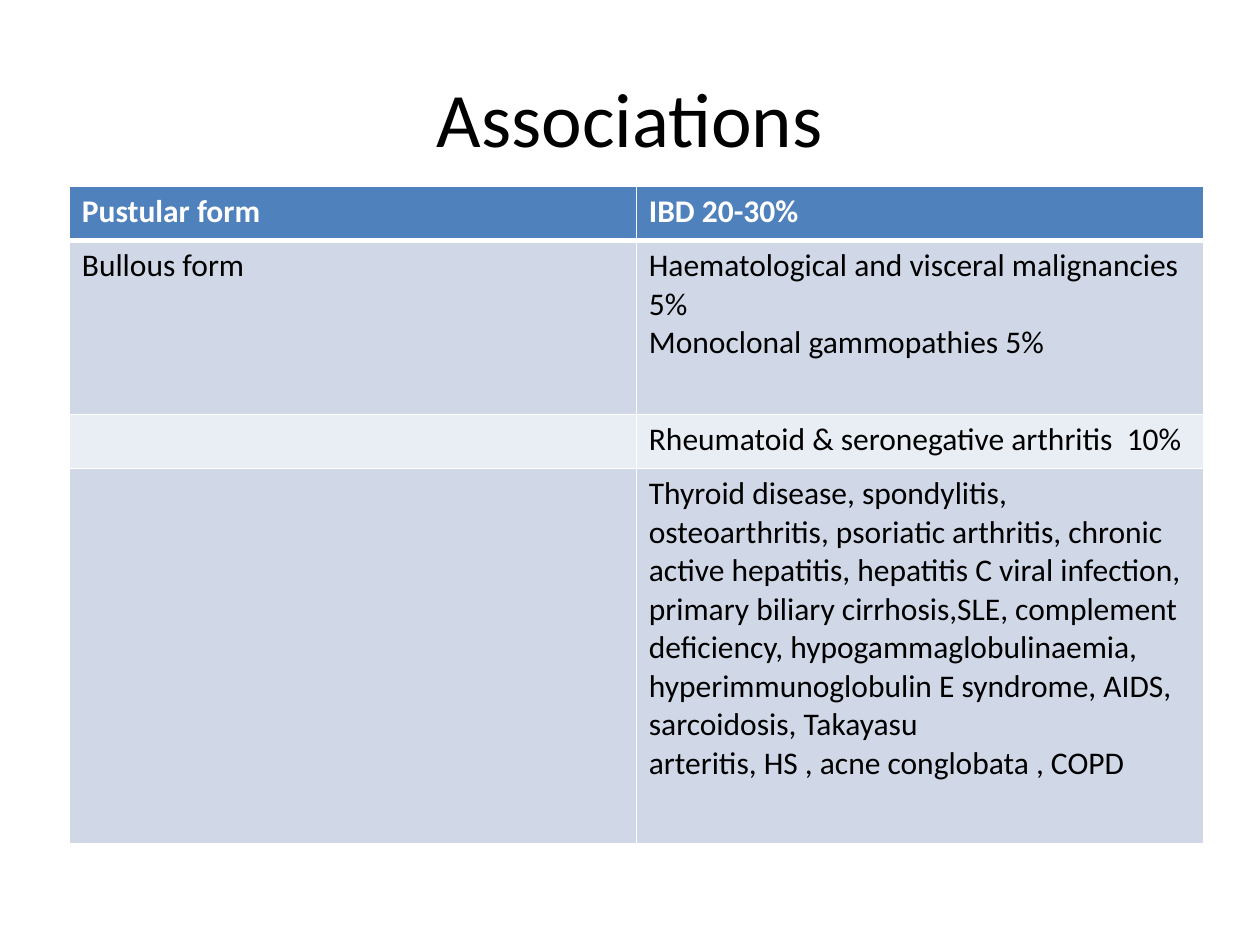
from dataclasses import dataclass

from lxml.etree import SubElement
from pptx import Presentation
from pptx.dml.color import RGBColor as RGB
from pptx.enum.text import MSO_ANCHOR as Anchor, PP_ALIGN as Align
from pptx.oxml.ns import qn
from pptx.util import Inches, Pt

# Content: one tuple per row, one list of paragraphs per cell
TITLE = "Associations"
ROWS = [
    (["Pustular form"], ["IBD 20-30%"]),
    (["Bullous form"],
     ["Haematological and visceral malignancies 5%", "Monoclonal gammopathies 5%"]),
    ([], ["Rheumatoid & seronegative arthritis  10%"]),
    ([], ["Thyroid disease, spondylitis, osteoarthritis, psoriatic arthritis, "
          "chronic active hepatitis, hepatitis C viral infection, primary biliary "
          "cirrhosis,SLE, complement deficiency, hypogammaglobulinaemia, "
          "hyperimmunoglobulin E syndrome, AIDS, sarcoidosis, Takayasu",
          "arteritis, HS , acne conglobata , COPD"]),
]
ROW_HEIGHTS = [0.43, 1.38, 0.43, 2.98]
COLUMN_WIDTH = 4.5


@dataclass(frozen=True)
class Theme:
    font: str = "Calibri"
    title_size: int = 44
    body_size: int = 18
    text: str = "000000"
    header_text: str = "FFFFFF"
    header_fill: str = "4F81BD"
    bands: tuple = ("E9EDF4", "D0D8E8")
    border: str = "FFFFFF"
    thin: int = 1
    thick: int = 3


THEME = Theme()


def write(frame, lines, size, color, bold=False, align=Align.LEFT):
    for index, line in enumerate(lines):
        para = frame.add_paragraph() if index else frame.paragraphs[0]
        para.alignment = align
        span = para.add_run()
        span.text = line
        span.font.name = THEME.font
        span.font.size = Pt(size)
        span.font.bold = bold
        span.font.color.rgb = RGB.from_string(color)


def add_borders(cell, top, bottom):
    """Draw the four cell edges; call before the fill, which must follow them."""
    properties = cell._tc.get_or_add_tcPr()
    widths = {"lnL": THEME.thin, "lnR": THEME.thin, "lnT": top, "lnB": bottom}
    for tag, width in widths.items():
        line = SubElement(properties, qn(f"a:{tag}"), w=str(Pt(width)))
        fill = SubElement(line, qn("a:solidFill"))
        SubElement(fill, qn("a:srgbClr"), val=THEME.border)


def add_title(page):
    box = page.shapes.add_textbox(Inches(0.5), Inches(0.3), Inches(9), Inches(1.25))
    frame = box.text_frame
    frame.word_wrap = True
    frame.vertical_anchor = Anchor.MIDDLE
    write(frame, [TITLE], THEME.title_size, THEME.text, align=Align.CENTER)


def add_associations(page):
    columns = len(ROWS[0])
    table = page.shapes.add_table(
        len(ROWS), columns, Inches(0.55), Inches(1.48),
        Inches(COLUMN_WIDTH * columns), Inches(sum(ROW_HEIGHTS))).table
    for column in table.columns:
        column.width = Inches(COLUMN_WIDTH)
    for index, (row, height) in enumerate(zip(ROWS, ROW_HEIGHTS)):
        table.rows[index].height = Inches(height)
        header = index == 0
        fill = THEME.header_fill if header else THEME.bands[index % 2]
        color = THEME.header_text if header else THEME.text
        # The heavy rule is shared by the header and the row below it
        top = THEME.thick if index == 1 else THEME.thin
        bottom = THEME.thick if header else THEME.thin
        for cell, lines in zip(table.rows[index].cells, row):
            add_borders(cell, top, bottom)
            cell.fill.solid()
            cell.fill.fore_color.rgb = RGB.from_string(fill)
            write(cell.text_frame, lines, THEME.body_size, color, bold=header)


def main():
    deck = Presentation()
    deck.slide_width, deck.slide_height = Inches(10), Inches(7.5)
    page = deck.slides.add_slide(deck.slide_layouts[6])
    add_title(page)
    add_associations(page)
    deck.save("out.pptx")


if __name__ == "__main__":
    main()
